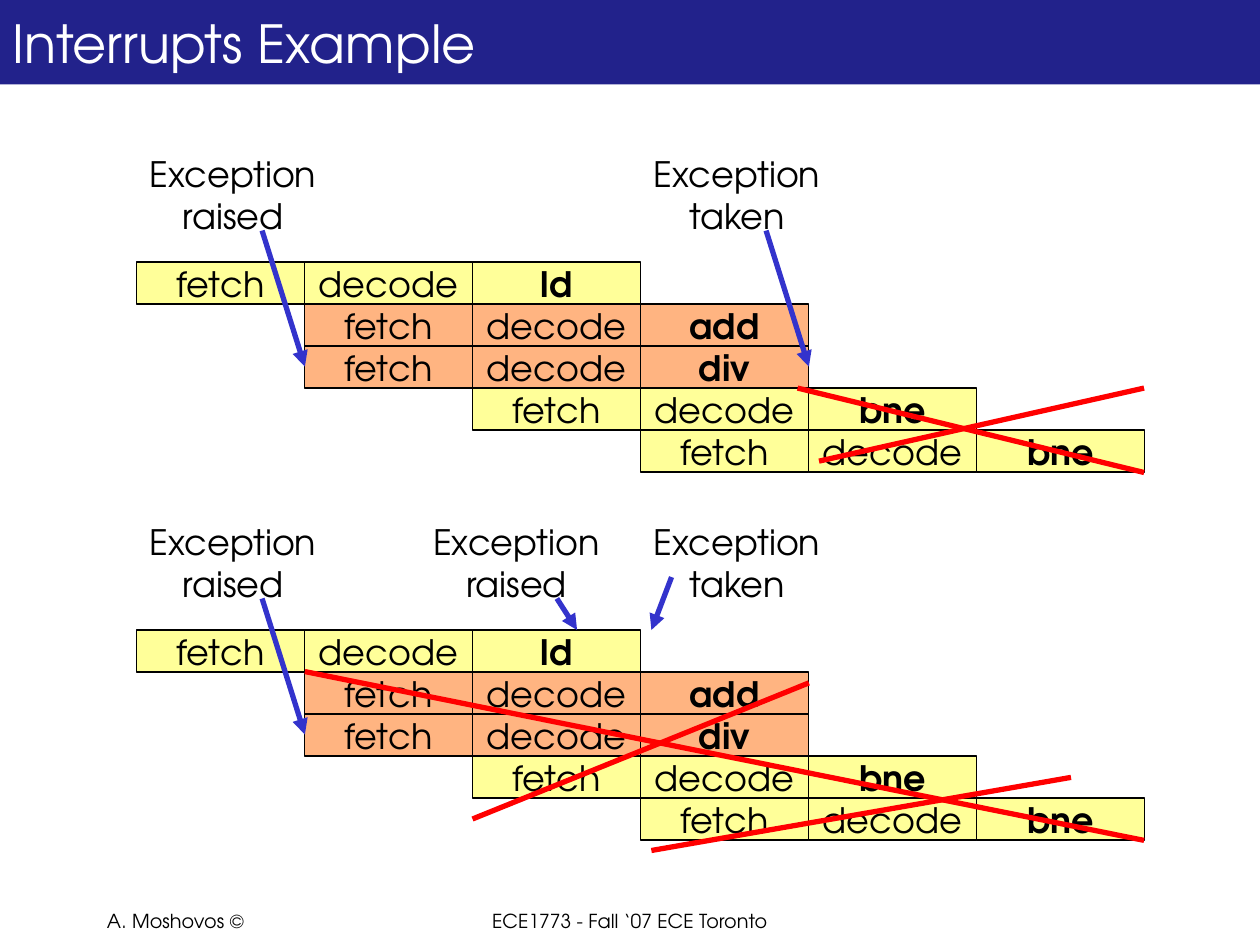
from dataclasses import dataclass

from lxml import etree
from pptx import Presentation
from pptx.dml.color import RGBColor
from pptx.enum import shapes, text
from pptx.oxml import ns
from pptx.util import Inches, Pt

FONT = "TeX Gyre Adventor"
BLACK = RGBColor(0x00, 0x00, 0x00)
WHITE = RGBColor(0xFF, 0xFF, 0xFF)
NAVY = RGBColor(0x22, 0x22, 0x8B)
BLUE = RGBColor(0x33, 0x33, 0xCC)
RED = RGBColor(0xFF, 0x00, 0x00)
YELLOW = RGBColor(0xFF, 0xFF, 0x99)
ORANGE = RGBColor(0xFF, 0xB4, 0x81)

LEFT = 13 / 12
CELL_W = 4 / 3
CELL_H = 1 / 3
LEAD = 11 / 12  # from the top of the labels to the first row

LEFT_AL = text.PP_ALIGN.LEFT
CENTER = text.PP_ALIGN.CENTER


@dataclass
class Instr:
    name: str
    start: int
    fill: RGBColor


@dataclass
class Label:
    words: str
    x: float


@dataclass
class Line:
    x1: float
    y1: float
    x2: float
    y2: float


@dataclass
class Case:
    """One pipeline diagram; line heights count from its first row."""
    top: float
    labels: list[Label]
    arrows: list[Line]
    strikes: list[Line]


INSTRS = [
    Instr("ld", 0, YELLOW),
    Instr("add", 1, ORANGE),
    Instr("div", 1, ORANGE),
    Instr("bne", 2, YELLOW),
    Instr("bne", 3, YELLOW),
]

CASES = [
    Case(
        top=2.08,
        labels=[Label("Exception\nraised", 1.08), Label("Exception\ntaken", 5.08)],
        arrows=[Line(2.08, -0.25, 2.42, 0.83), Line(6.08, -0.25, 6.42, 0.83)],
        strikes=[Line(6.33, 1, 9.08, 1.67), Line(6.5, 1.58, 9.08, 1)],
    ),
    Case(
        top=5,
        labels=[
            Label("Exception\nraised", 1.08),
            Label("Exception\nraised", 3.33),
            Label("Exception\ntaken", 5.08),
        ],
        arrows=[
            Line(2.08, -0.25, 2.42, 0.83),
            Line(4.42, -0.25, 4.58, 0),
            Line(5.33, -0.42, 5.17, 0),
        ],
        strikes=[
            Line(2.42, 0.33, 9.08, 1.67),
            Line(3.75, 1.5, 6.42, 0.42),
            Line(5.17, 1.75, 8.5, 1.17),
        ],
    ),
]


def write(shape, words: str, size: float, color: RGBColor = BLACK,
          align=CENTER, bold: bool = False, wrap: bool = False) -> None:
    frame = shape.text_frame
    frame.text = words
    frame.word_wrap = wrap
    for para in frame.paragraphs:
        para.alignment = align
        for run in para.runs:
            run.font.name = FONT
            run.font.size = Pt(size)
            run.font.bold = bold
            run.font.color.rgb = color


def add_rect(slide, x: float, y: float, w: float, h: float, fill: RGBColor):
    rect = slide.shapes.add_shape(
        shapes.MSO_SHAPE.RECTANGLE, Inches(x), Inches(y), Inches(w), Inches(h))
    rect.shadow.inherit = False
    rect.fill.solid()
    rect.fill.fore_color.rgb = fill
    rect.text_frame.vertical_anchor = text.MSO_ANCHOR.MIDDLE
    return rect


def add_box(slide, x: float, y: float, w: float, h: float):
    return slide.shapes.add_textbox(Inches(x), Inches(y), Inches(w), Inches(h))


def add_title(slide, words: str) -> None:
    bar = add_rect(slide, 0, 0, 10, 0.67, NAVY)
    bar.line.fill.background()
    write(bar, words, 30, WHITE, LEFT_AL, wrap=True)


def add_row(slide, instr: Instr, y: float) -> None:
    """Draw the three stages of one instruction."""
    for step, stage in enumerate(("fetch", "decode", instr.name)):
        x = LEFT + (instr.start + step) * CELL_W
        cell = add_rect(slide, x, y, CELL_W, CELL_H, instr.fill)
        cell.line.color.rgb = BLACK
        cell.line.width = Pt(0.75)
        write(cell, stage, 20, bold=step == 2)


def add_line(slide, line: Line, top: float, color: RGBColor,
             head: bool = False) -> None:
    conn = slide.shapes.add_connector(
        shapes.MSO_CONNECTOR.STRAIGHT,
        Inches(line.x1), Inches(top + line.y1),
        Inches(line.x2), Inches(top + line.y2))
    conn.line.color.rgb = color
    conn.line.width = Pt(3)
    if head:
        etree.SubElement(conn.line._get_or_add_ln(), ns.qn("a:tailEnd"),
                         type="triangle")
    etree.SubElement(conn._element.spPr, ns.qn("a:effectLst"))


def add_label(slide, label: Label, y: float) -> None:
    box = add_box(slide, label.x, y, 1.54, 0.77)
    write(box, label.words, 20)
    box.text_frame.auto_size = text.MSO_AUTO_SIZE.SHAPE_TO_FIT_TEXT


def add_case(slide, case: Case) -> None:
    for row, instr in enumerate(INSTRS):
        add_row(slide, instr, case.top + row * CELL_H)
    for arrow in case.arrows:
        add_line(slide, arrow, case.top, BLUE, head=True)
    for label in case.labels:
        add_label(slide, label, case.top - LEAD)
    for strike in case.strikes:
        add_line(slide, strike, case.top, RED)


def main() -> None:
    deck = Presentation()
    deck.slide_width = Inches(10)
    deck.slide_height = Inches(7.5)
    slide = deck.slides.add_slide(deck.slide_layouts[6])
    write(add_box(slide, 0.75, 7.17, 2.08, 0.42), "A. Moshovos ©", 11,
          align=LEFT_AL, wrap=True)
    write(add_box(slide, 3.25, 7.17, 3.5, 0.42),
          "ECE1773 - Fall ‘07 ECE Toronto", 11, wrap=True)
    add_title(slide, "Interrupts Example")
    for case in CASES:
        add_case(slide, case)
    deck.save("out.pptx")


if __name__ == "__main__":
    main()
